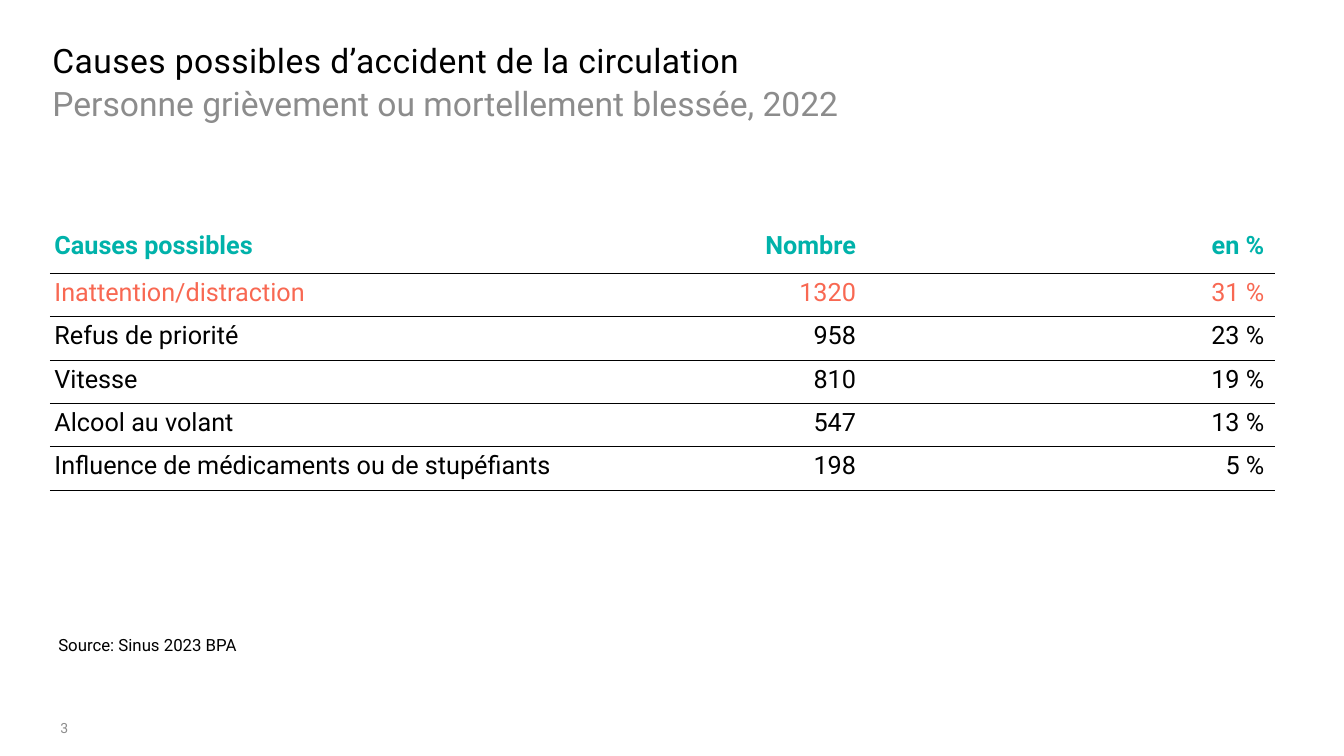
from lxml import etree
from pptx import Presentation
from pptx.dml.color import RGBColor
from pptx.enum.text import MSO_ANCHOR, MSO_AUTO_SIZE, PP_ALIGN
from pptx.oxml.ns import qn
from pptx.util import Inches, Pt

TOP, NO_FIT = MSO_ANCHOR.TOP, MSO_AUTO_SIZE.NONE
LEFT, RIGHT = PP_ALIGN.LEFT, PP_ALIGN.RIGHT
BLACK, GREY, TEAL, CORAL = "000000", "8C8C8C", "00B2AA", "F86852"

# Content
TITLE = "Causes possibles d’accident de la circulation"
SUB = "Personne grièvement ou mortellement blessée, 2022"
SOURCE = "Source: Sinus\u00a02023 BPA"
PAGE = "3"
ROWS = [
    ("Causes possibles", "Nombre", "en %"),
    ("Inattention/distraction", "1320", "31 %"),
    ("Refus de priorité", "958", "23 %"),
    ("Vitesse", "810", "19 %"),
    ("Alcool au volant", "547", "13 %"),
    ("Influence de médicaments ou de stupéfiants", "198", "5 %"),
    ("", "", ""),
]
TINTS = {0: TEAL, 1: CORAL}

# Layout in inches
WIDE, HIGH = 13.33, 7.5
MARGIN, SPAN = 0.52, 12.28
COLS = (6.43, 1.66, 4.05)
HEAD, ROW = 0.47, 0.43


def style(para, size, color, align=LEFT, bold=False):
    para.alignment = align
    font = para.font
    font.name, font.size, font.bold = "Roboto", Pt(size), bold
    font.color.rgb = RGBColor.from_string(color)


def write(shape, box, text, size, color, inset=(0, 0)):
    shape.left, shape.top, shape.width, shape.height = map(Inches, box)
    frame = shape.text_frame
    frame.word_wrap, frame.auto_size = True, NO_FIT
    frame.vertical_anchor = TOP
    frame.margin_left = frame.margin_right = Inches(inset[0])
    frame.margin_top = frame.margin_bottom = Inches(inset[1])
    para = frame.paragraphs[0]
    para.text = text
    para.space_before = Pt(0)
    return para


def rule(cell, side):
    line = etree.SubElement(cell._tc.get_or_add_tcPr(), qn("a:" + side), w="6350")
    fill = etree.SubElement(line, qn("a:solidFill"))
    etree.SubElement(fill, qn("a:srgbClr"), val=BLACK)


def add_text(slide, box, text, size, color, inset=(0, 0)):
    shape = slide.shapes.add_textbox(0, 0, 0, 0)
    style(write(shape, box, text, size, color, inset), size, color)


def add_grid(slide):
    last = len(ROWS) - 1
    box = (0.5, 2.24, sum(COLS), HEAD + last * ROW)
    table = slide.shapes.add_table(len(ROWS), len(COLS), *map(Inches, box)).table
    table.first_row = table.horz_banding = False
    for col, width in zip(table.columns, COLS):
        col.width = Inches(width)
    for r, row in enumerate(ROWS):
        table.rows[r].height = Inches(ROW if r else HEAD)
        for c, text in enumerate(row):
            cell = table.cell(r, c)
            cell.margin_left, cell.margin_right = Inches(0.04), Inches(0.1)
            cell.margin_top = cell.margin_bottom = Inches(0.05)
            cell.vertical_anchor = TOP
            if r > 0:
                rule(cell, "lnT")
            if r < last:
                rule(cell, "lnB")
            cell.fill.background()
            para = cell.text_frame.paragraphs[0]
            para.text = text
            style(para, 18, TINTS.get(r, BLACK), RIGHT if c else LEFT, r == 0)


def main():
    deck = Presentation()
    deck.slide_width, deck.slide_height = Inches(WIDE), Inches(HIGH)
    slide = deck.slides.add_slide(deck.slide_layouts[1])

    # Title and subtitle
    para = write(slide.shapes.title, (MARGIN, 0.4, SPAN, 0.35), TITLE, 24, BLACK)
    para.runs[0]._r.get_or_add_rPr().set("spc", "30")
    style(para, 24, BLACK)
    para = write(slide.placeholders[1], (MARGIN, 0.8, SPAN, 0.39), SUB, 24, GREY)
    para.line_spacing, para.space_after = 1.05, Pt(12)
    props = para._p.get_or_add_pPr()
    props.set("marL", "0")
    props.set("indent", "0")
    etree.SubElement(props, qn("a:buNone"))
    style(para, 24, GREY)

    # Table, source and page number
    add_grid(slide)
    add_text(slide, (0.48, 6.25, 12.43, 0.3), SOURCE, 12, BLACK, (0.1, 0.05))
    add_text(slide, (0.6, 7.14, 0.89, 0.18), PAGE, 10, GREY)
    deck.save("out.pptx")


if __name__ == "__main__":
    main()
